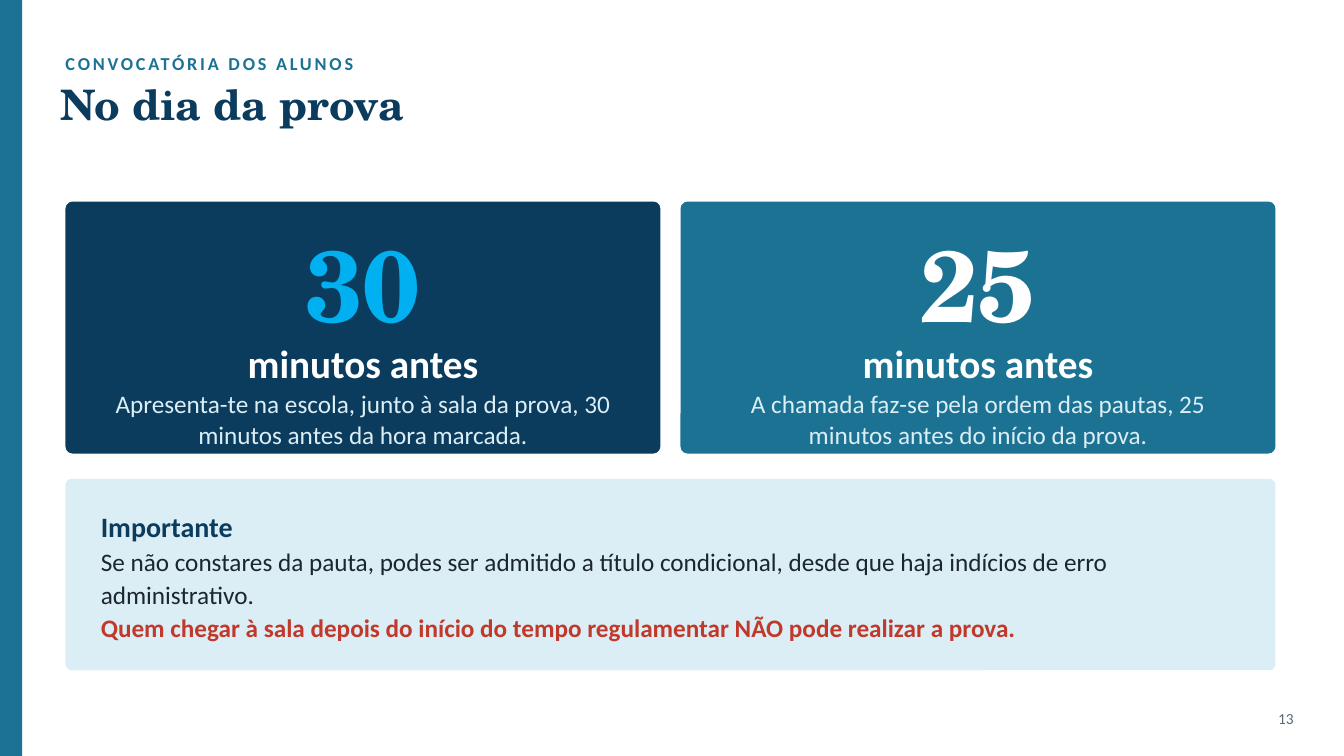
from pptx import Presentation
from pptx.dml.color import RGBColor
from pptx.enum.shapes import MSO_SHAPE
from pptx.enum.text import MSO_ANCHOR, MSO_AUTO_SIZE, PP_ALIGN
from pptx.util import Pt

RECTANGLE, ROUNDED = MSO_SHAPE.RECTANGLE, MSO_SHAPE.ROUNDED_RECTANGLE
TOP, MIDDLE = MSO_ANCHOR.TOP, MSO_ANCHOR.MIDDLE
LEFT, CENTER, RIGHT = PP_ALIGN.LEFT, PP_ALIGN.CENTER, PP_ALIGN.RIGHT
NO_AUTOFIT = MSO_AUTO_SIZE.NONE
EMU_PER_PX = 9144
SLIDE_WIDTH, SLIDE_HEIGHT = 1333, 750
MARGIN, CONTENT_WIDTH, CARD_GAP = 65, 1200, 20
TITLE_LAYOUT = 5
BODY_FONT, DISPLAY_FONT = "Calibri", "TeX Gyre Schola"
COLORS = {
    "navy": "0B3C5D",
    "teal": "1C7293",
    "sky": "00B0F0",
    "pale": "DCEEF5",
    "white": "FFFFFF",
    "ink": "1A2630",
    "red": "C0392B",
    "grey": "5A6B75",
}
CARDS = [
    ("navy", "sky", "30",
     "Apresenta-te na escola, junto à sala da prova, 30 minutos antes da hora marcada."),
    ("teal", "white", "25",
     "A chamada faz-se pela ordem das pautas, 25 minutos antes do início da prova."),
]
NOTICE = [
    ("Importante", 20, "navy", True),
    ("Se não constares da pauta, podes ser admitido a título condicional, "
     "desde que haja indícios de erro administrativo.", 18, "ink", False),
    ("Quem chegar à sala depois do início do tempo regulamentar "
     "NÃO pode realizar a prova.", 18, "red", True),
]


def px(length):
    """Turn whole pixels into EMU."""
    return length * EMU_PER_PX


def rgb(name):
    """Look up a named colour."""
    return RGBColor.from_string(COLORS[name])


def add_panel(slide, box, color, preset=RECTANGLE, corner=None):
    """Draw a plain filled shape in the box."""
    shape = slide.shapes.add_shape(preset, *map(px, box))
    shape.shadow.inherit = False
    shape.fill.solid()
    shape.fill.fore_color.rgb = rgb(color)
    shape.line.fill.background()
    if corner is not None:
        shape.adjustments[0] = corner


def prepare_frame(frame, anchor=MIDDLE, inset=(0, 0)):
    """Set wrapping, anchor and insets of a text frame."""
    frame.word_wrap = True
    frame.auto_size = NO_AUTOFIT
    frame.vertical_anchor = anchor
    frame.margin_left = frame.margin_right = px(inset[0])
    frame.margin_top = frame.margin_bottom = px(inset[1])


def write(paragraph, text, size, color, bold=False, font=BODY_FONT,
          align=LEFT, spacing=None):
    """Fill and format one paragraph."""
    paragraph.text = text
    paragraph.alignment = align
    if spacing:
        paragraph.line_spacing = spacing
    paragraph.font.size = Pt(size)
    paragraph.font.name = font
    paragraph.font.bold = bold
    paragraph.font.color.rgb = rgb(color)


def add_label(slide, box, text, size, color, inset=(0, 0), **style):
    """Add a one-paragraph text box and return its paragraph."""
    frame = slide.shapes.add_textbox(*map(px, box)).text_frame
    prepare_frame(frame, inset=inset)
    paragraph = frame.paragraphs[0]
    write(paragraph, text, size, color, **style)
    return paragraph


def add_header(slide, box):
    """Place the spaced kicker and the slide title."""
    left, top, width, height = box
    kicker = add_label(slide, (left + 5, top, 1100, 35),
                       "CONVOCATÓRIA DOS ALUNOS", 13, "teal", bold=True)
    kicker.runs[0].font._element.set("spc", "200")
    title = slide.shapes.title
    title.left, title.top = px(left), px(top + 33)
    title.width, title.height = px(width), px(height - 33)
    prepare_frame(title.text_frame, TOP)
    write(title.text_frame.paragraphs[0], "No dia da prova", 30, "navy",
          bold=True, font=DISPLAY_FONT)


def add_card(slide, box, fill, number_color, number, description):
    """Place a card with a large number, its unit and a description."""
    left, top, width, _ = box
    add_panel(slide, box, fill, ROUNDED, 0.028)
    add_label(slide, (left, top + 15, width, 130), number, 72, number_color,
              bold=True, font=DISPLAY_FONT, align=CENTER)
    add_label(slide, (left, top + 135, width, 50), "minutos antes", 28, "white",
              bold=True, align=CENTER)
    add_label(slide, (left + 45, top + 185, width - 90, 60), description, 18,
              "pale", align=CENTER, spacing=1.02)


def add_notice(slide, box):
    """Place the pale panel with the important notice."""
    left, top, width, height = box
    add_panel(slide, box, "pale", ROUNDED, 0.032)
    text_box = (left + 35, top + 15, width - 60, height - 30)
    frame = slide.shapes.add_textbox(*map(px, text_box)).text_frame
    prepare_frame(frame)
    for index, (text, size, color, bold) in enumerate(NOTICE):
        paragraph = frame.add_paragraph() if index else frame.paragraphs[0]
        write(paragraph, text, size, color, bold, spacing=1.1)


def main():
    """Build and save the slide."""
    presentation = Presentation()
    presentation.slide_width = px(SLIDE_WIDTH)
    presentation.slide_height = px(SLIDE_HEIGHT)
    slide = presentation.slides.add_slide(presentation.slide_layouts[TITLE_LAYOUT])
    add_panel(slide, (0, 0, 22, SLIDE_HEIGHT), "teal")
    add_header(slide, (60, 45, 1210, 128))
    card_width = (CONTENT_WIDTH - CARD_GAP) // len(CARDS)
    for index, card in enumerate(CARDS):
        left = MARGIN + index * (card_width + CARD_GAP)
        add_card(slide, (left, 200, card_width, 250), *card)
    add_notice(slide, (MARGIN, 475, CONTENT_WIDTH, 190))
    add_label(slide, (1243, 695, 50, 35), "13", 11, "grey",
              inset=(10, 5), align=RIGHT)
    presentation.save("out.pptx")


if __name__ == "__main__":
    main()
